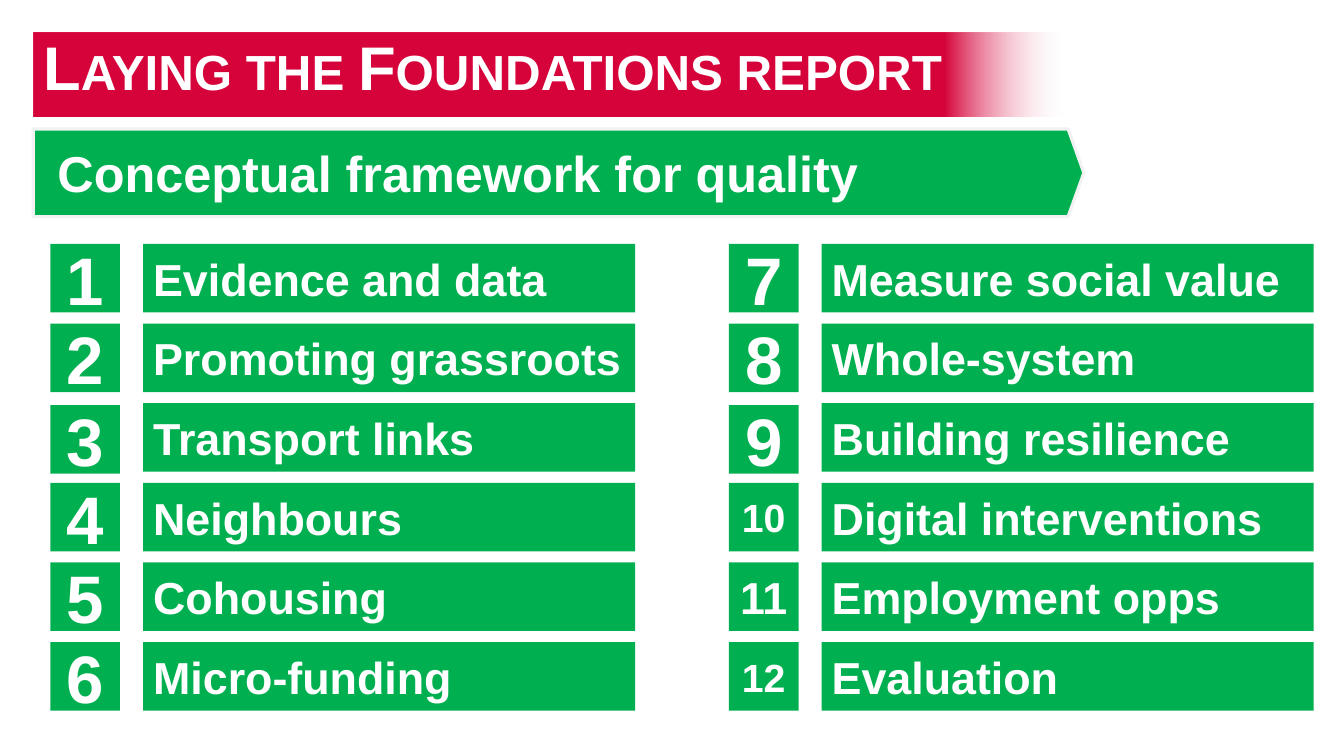
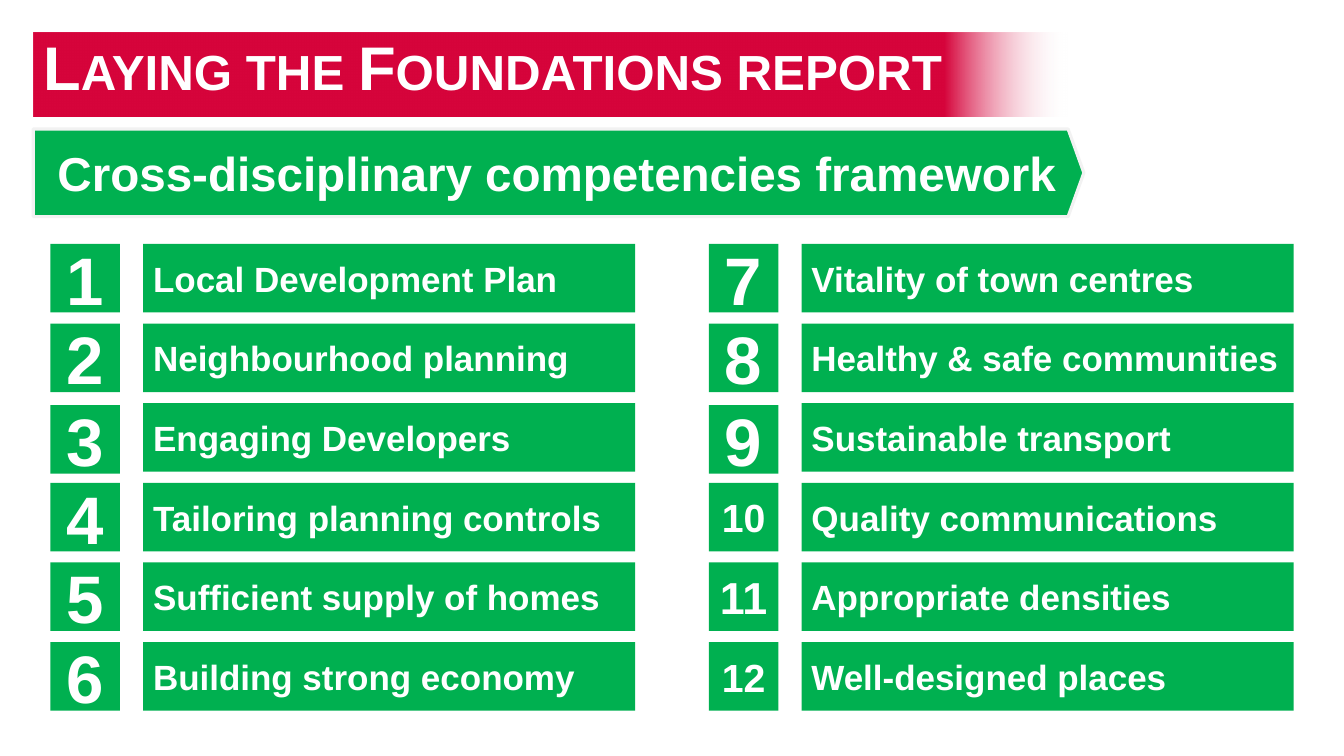
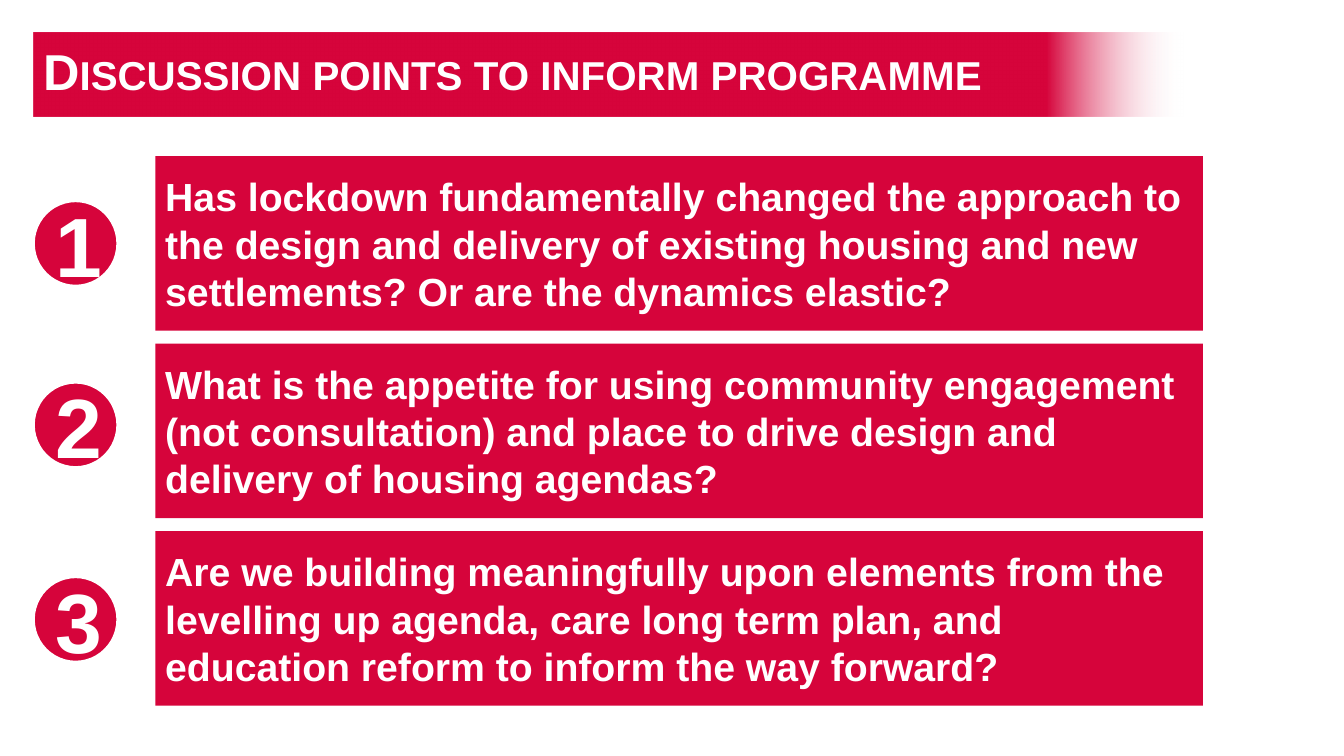
from lxml import etree
from pptx import Presentation
from pptx.dml.color import RGBColor
from pptx.enum.shapes import MSO_SHAPE
from pptx.enum.text import MSO_ANCHOR, PP_ALIGN
from pptx.oxml.ns import qn
from pptx.util import Inches, Pt

RECTANGLE, OVAL, PENTAGON = MSO_SHAPE.RECTANGLE, MSO_SHAPE.OVAL, MSO_SHAPE.PENTAGON
TOP, MIDDLE = MSO_ANCHOR.TOP, MSO_ANCHOR.MIDDLE
LEFT, CENTER = PP_ALIGN.LEFT, PP_ALIGN.CENTER

FONT = "Arial"
WHITE = RGBColor(0xFF, 0xFF, 0xFF)
PALE_GREY = RGBColor(0xF2, 0xF2, 0xF2)
RED = RGBColor(0xD6, 0x04, 0x3B)
GREEN = RGBColor(0x00, 0xB0, 0x50)

# Content
REPORT_TITLE = "Laying the Foundations report"
FRAMEWORKS = [
    {
        "heading": "Conceptual framework for quality",
        "heading_size": 36,
        "item_size": 32,
        "column_lefts": (0.5, 7.23),
        "items": [
            "Evidence and data", "Promoting grassroots", "Transport links",
            "Neighbours", "Cohousing", "Micro-funding",
            "Measure social value", "Whole-system", "Building resilience",
            "Digital interventions", "Employment opps", "Evaluation",
        ],
    },
    {
        "heading": "Cross-disciplinary competencies framework",
        "heading_size": 34,
        "item_size": 25,
        "column_lefts": (0.5, 7.03),
        "items": [
            "Local Development Plan", "Neighbourhood planning", "Engaging Developers",
            "Tailoring planning controls", "Sufficient supply of homes",
            "Building strong economy",
            "Vitality of town centres", "Healthy & safe communities",
            "Sustainable transport", "Quality communications",
            "Appropriate densities", "Well-designed places",
        ],
    },
]
DISCUSSION_TITLE = "Discussion points to inform programme"
# Question and the top of its numbered circle
QUESTIONS = [
    ("Has lockdown fundamentally changed the approach to the design and delivery of "
     "existing housing and new settlements? Or are the dynamics elastic?", 1.99),
    ("What is the appetite for using community engagement (not consultation) and place "
     "to drive design and delivery of housing agendas?", 3.79),
    ("Are we building meaningfully upon elements from the levelling up agenda, care long "
     "term plan, and education reform to inform the way forward?", 5.72),
]

# Layout, in inches
MARGIN = 0.33
ROWS, ROW_TOP, ROW_PITCH, ROW_HEIGHT = 6, 2.42, 0.79, 0.68
NUMBER_WIDTH, ITEM_OFFSET, ITEM_WIDTH = 0.69, 0.92, 4.88
NUMBER_NUDGE = {2: 0.02}
NUMBER_SIZE = 48
WIDE_NUMBER_SIZES = {10: 28, 11: 32, 12: 28}
QUESTION_TOP, QUESTION_PITCH = 1.55, 1.86


def add_block(slide, kind, box, fill=None, line=None):
    shape = slide.shapes.add_shape(kind, *(Inches(value) for value in box))
    shape.shadow.inherit = False
    if fill is not None:
        shape.fill.solid()
        shape.fill.fore_color.rgb = fill
    if line is None:
        shape.line.fill.background()
    else:
        shape.line.color.rgb = line
        shape.line.width = Pt(2.25)
    return shape


def write_text(shape, text, size, align=LEFT, anchor=MIDDLE, spacing=None, small_caps=False):
    frame = shape.text_frame
    frame.vertical_anchor = anchor
    paragraph = frame.paragraphs[0]
    paragraph.alignment = align
    paragraph.line_spacing = spacing
    run = paragraph.add_run()
    run.text = text
    run.font.name = FONT
    run.font.size = Pt(size)
    run.font.bold = True
    run.font.color.rgb = WHITE
    if small_caps:
        run.font._element.set("cap", "small")


def fade_right(shape):
    """Red band that fades to transparent at its right end."""
    shape.fill.gradient()
    shape.fill.gradient_angle = 180
    stops = shape._element.spPr.find(qn("a:gradFill")).find(qn("a:gsLst"))
    for stop in list(stops):
        stops.remove(stop)
    for percent, color in ((0, WHITE), (12, RED), (100, RED)):
        stop = etree.SubElement(stops, qn("a:gs"), pos=str(percent * 1000))
        value = etree.SubElement(stop, qn("a:srgbClr"), val=str(color))
        if color == WHITE:
            etree.SubElement(value, qn("a:alpha"), val="0")


def add_title(slide, text, width, size, anchor):
    band = add_block(slide, RECTANGLE, (MARGIN, 0.32, width, 0.84))
    fade_right(band)
    write_text(band, text, size, anchor=anchor, spacing=0.9, small_caps=True)


def add_framework_slide(slide, framework):
    add_title(slide, REPORT_TITLE, 10.26, 44, TOP)

    # Heading arrow
    arrow = add_block(slide, PENTAGON, (MARGIN, 1.28, 10.42, 0.87), GREEN, PALE_GREY)
    arrow.adjustments[0] = 0.18
    arrow.text_frame.margin_left = Inches(0.24)
    write_text(arrow, framework["heading"], framework["heading_size"])

    # Two columns of numbered items
    for index, item in enumerate(framework["items"]):
        column, row = divmod(index, ROWS)
        number = index + 1
        left = framework["column_lefts"][column]
        top = ROW_TOP + row * ROW_PITCH
        item_box = add_block(
            slide, RECTANGLE, (left + ITEM_OFFSET, top, ITEM_WIDTH, ROW_HEIGHT), GREEN)
        write_text(item_box, item, framework["item_size"])
        number_top = top + NUMBER_NUDGE.get(row, 0)
        number_box = add_block(
            slide, RECTANGLE, (left, number_top, NUMBER_WIDTH, ROW_HEIGHT), GREEN)
        write_text(number_box, str(number), WIDE_NUMBER_SIZES.get(number, NUMBER_SIZE),
                   align=CENTER)


def add_discussion_slide(slide):
    add_title(slide, DISCUSSION_TITLE, 11.41, 36, MIDDLE)
    for index, (question, circle_top) in enumerate(QUESTIONS):
        top = QUESTION_TOP + index * QUESTION_PITCH
        box = add_block(slide, RECTANGLE, (1.54, top, 10.39, 1.73), RED)
        write_text(box, question, 28)
        circle = add_block(slide, OVAL, (MARGIN, circle_top, 0.84, 0.85), RED, WHITE)
        write_text(circle, str(index + 1), 60, align=CENTER)


def main():
    presentation = Presentation()
    presentation.slide_width = Inches(13.33)
    presentation.slide_height = Inches(7.5)
    blank = presentation.slide_layouts[6]
    for framework in FRAMEWORKS:
        add_framework_slide(presentation.slides.add_slide(blank), framework)
    add_discussion_slide(presentation.slides.add_slide(blank))
    presentation.save("out.pptx")


if __name__ == "__main__":
    main()
